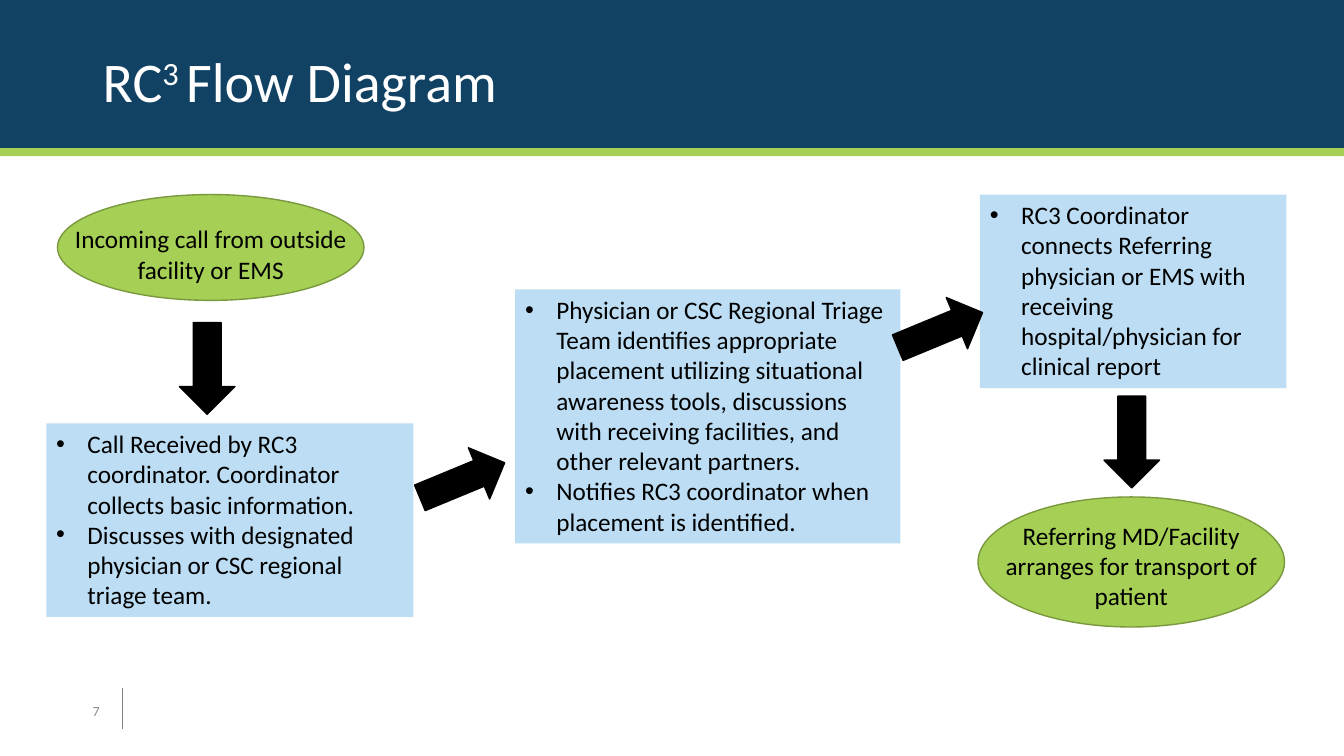
from dataclasses import dataclass

from lxml.etree import SubElement
from pptx import Presentation
from pptx.dml.color import RGBColor
from pptx.enum.shapes import MSO_CONNECTOR, MSO_SHAPE
from pptx.enum.text import MSO_ANCHOR, MSO_AUTO_SIZE, PP_ALIGN
from pptx.oxml.ns import qn
from pptx.util import Inches, Pt


@dataclass(frozen=True)
class Theme:
    """Colours, font and type sizes of the deck."""
    font: str = "Calibri"
    navy: str = "114263"
    green: str = "A5CF55"
    green_edge: str = "7A993F"
    sky: str = "BCDDF3"
    black: str = "000000"
    white: str = "FFFFFF"
    rule: str = "808080"
    number: str = "8C8C8C"
    title_size: int = 40
    body_size: int = 18
    number_size: int = 10


THEME = Theme()

ENDPOINTS = [
    ((0.57, 1.93, 3.04, 1.05), 0.24, 0.71, "Incoming call from outside facility or EMS"),
    ((9.7, 4.93, 3.04, 1.29), 0.18, 1.01,
     "Referring MD/Facility arranges for transport of patient"),
]
STEPS = [
    ((0.46, 4.2, 3.64, 1.92), [
        "Call Received by RC3 coordinator. Coordinator collects basic information.",
        "Discusses with designated physician or CSC regional triage team."]),
    ((5.11, 2.87, 3.82, 2.52), [
        "Physician or CSC Regional Triage Team identifies appropriate placement utilizing "
        "situational awareness tools, discussions with receiving facilities, and other "
        "relevant partners.",
        "Notifies RC3 coordinator when placement is identified."]),
    ((9.72, 1.93, 3.04, 1.92), [
        "RC3 Coordinator connects Referring physician or EMS with receiving "
        "hospital/physician for clinical report"]),
]
ARROWS = [(1.6, 3.38, 90), (4.13, 4.49, 337.5), (8.87, 3, 337.5), (10.77, 4.11, 90)]


def style_font(font, size, color):
    """Apply the theme font with a size and colour."""
    font.name = THEME.font
    font.size = Pt(size)
    font.color.rgb = RGBColor.from_string(color)


def add_figure(page, kind, box, fill, edge=None):
    """Add a flat preset shape in the given box."""
    figure = page.shapes.add_shape(kind, *map(Inches, box))
    figure.shadow.inherit = False
    figure.fill.solid()
    figure.fill.fore_color.rgb = RGBColor.from_string(fill)
    if edge:
        figure.line.color.rgb = RGBColor.from_string(edge)
        figure.line.width = Pt(1)
    else:
        figure.line.fill.background()
    return figure


def add_text_frame(page, box, anchor=MSO_ANCHOR.TOP):
    """Add a wrapping text box and return its frame."""
    frame = page.shapes.add_textbox(*map(Inches, box)).text_frame
    frame.word_wrap = True
    frame.vertical_anchor = anchor
    return frame


def add_bullet(para):
    """Give a paragraph a hanging round bullet."""
    properties = para._p.get_or_add_pPr()
    properties.set("marL", str(Inches(0.31)))
    properties.set("indent", str(-Inches(0.31)))
    SubElement(properties, qn("a:buFont"), typeface="Arial")
    SubElement(properties, qn("a:buChar"), char="•")


def add_header(page, box):
    """Draw the title band, its green edge and the title."""
    left, top, width, height = box
    add_figure(page, MSO_SHAPE.RECTANGLE, box, THEME.navy)
    add_figure(page, MSO_SHAPE.RECTANGLE, (left, top + height, width, 0.08), THEME.green)
    frame = add_text_frame(page, (left + 0.92, top + 0.11, 11.5, 1.45), MSO_ANCHOR.MIDDLE)
    para = frame.paragraphs[0]
    para.line_spacing = 0.9
    style_font(para.font, THEME.title_size, THEME.white)
    for text, baseline in (("RC", 0), ("3 ", 30000), ("Flow Diagram", 0)):
        span = para.add_run()
        span.text = text
        if baseline:
            span._r.get_or_add_rPr().set("baseline", str(baseline))


def add_footer(page, box):
    """Draw the page number and the rule beside it."""
    left, top, width, height = box
    frame = add_text_frame(page, box, MSO_ANCHOR.MIDDLE)
    frame.margin_left = 0
    para = frame.paragraphs[0]
    para.text = "7"
    style_font(para.font, THEME.number_size, THEME.number)
    x = Inches(left + width - 0.01)
    rule = page.shapes.add_connector(
        MSO_CONNECTOR.STRAIGHT, x, Inches(top - 0.02), x, Inches(top + height - 0.02))
    rule.line.color.rgb = RGBColor.from_string(THEME.rule)
    rule.line.width = Pt(0.5)
    SubElement(rule._element.spPr, qn("a:effectLst"))


def add_endpoint(page, box, text_offset, text_height, text):
    """Draw a start or end oval with its centred label."""
    left, top, width, _ = box
    add_figure(page, MSO_SHAPE.OVAL, box, THEME.green, THEME.green_edge)
    frame = add_text_frame(page, (left, top + text_offset, width, text_height))
    frame.auto_size = MSO_AUTO_SIZE.SHAPE_TO_FIT_TEXT
    para = frame.paragraphs[0]
    para.text = text
    para.alignment = PP_ALIGN.CENTER
    style_font(para.font, THEME.body_size, THEME.black)


def add_step(page, box, points):
    """Draw a step panel with bulleted points."""
    frame = add_figure(page, MSO_SHAPE.RECTANGLE, box, THEME.sky).text_frame
    frame.word_wrap = True
    frame.auto_size = MSO_AUTO_SIZE.SHAPE_TO_FIT_TEXT
    frame.vertical_anchor = MSO_ANCHOR.TOP
    for index, point in enumerate(points):
        para = frame.add_paragraph() if index else frame.paragraphs[0]
        para.text = point
        para.alignment = PP_ALIGN.LEFT
        add_bullet(para)
        style_font(para.font, THEME.body_size, THEME.black)


def add_flow(page):
    """Draw the ovals, step panels and arrows of the flow."""
    for endpoint in ENDPOINTS:
        add_endpoint(page, *endpoint)
    for box, points in STEPS:
        add_step(page, box, points)
    for left, top, angle in ARROWS:
        arrow = add_figure(page, MSO_SHAPE.RIGHT_ARROW, (left, top, 0.91, 0.55),
                           THEME.black, THEME.black)
        arrow.rotation = angle


def main():
    """Build and save the deck."""
    deck = Presentation()
    deck.slide_width = Inches(13.33)
    deck.slide_height = Inches(7.5)
    page = deck.slides.add_slide(deck.slide_layouts[6])
    add_header(page, (0, 0, 13.33, 1.47))
    add_footer(page, (0.92, 6.85, 0.3, 0.4))
    add_flow(page)
    deck.save("out.pptx")


if __name__ == "__main__":
    main()
